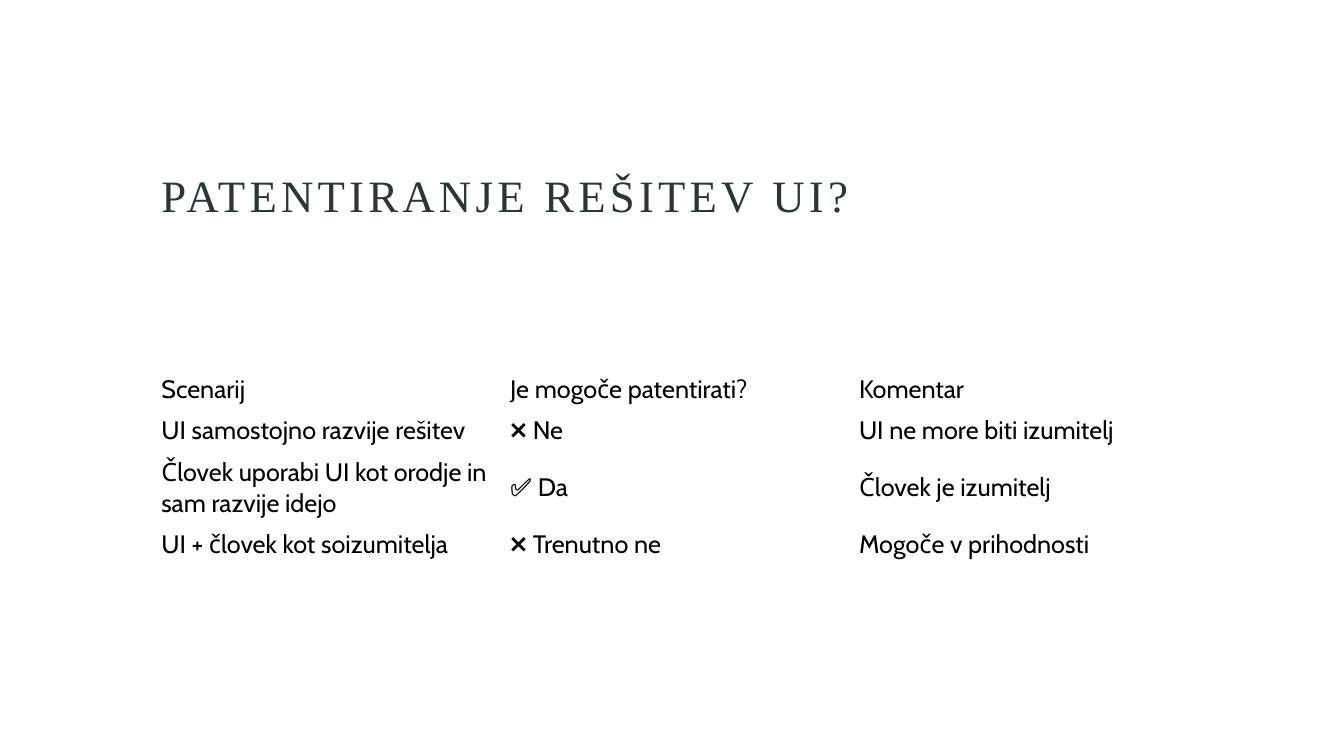
import pptx
import pptx.dml.color
import pptx.enum.text
import pptx.util

TITLE_COLOR = pptx.dml.color.RGBColor(0x29, 0x37, 0x37)
TEXT_COLOR = pptx.dml.color.RGBColor(0x00, 0x00, 0x00)
MIDDLE = pptx.enum.text.MSO_ANCHOR.MIDDLE
BOTTOM = pptx.enum.text.MSO_ANCHOR.BOTTOM
LEFT = pptx.enum.text.PP_ALIGN.LEFT

SLIDE_WIDTH, SLIDE_HEIGHT = 13.33, 7.5
MARGIN = 1.5
CONTENT_WIDTH = 10.38
LINE_HEIGHT = 0.31
CELL_PADDING = 0.1

SCENARIOS = [
    ("Scenarij", "Je mogoče patentirati?", "Komentar"),
    ("UI samostojno razvije rešitev", "❌ Ne", "UI ne more biti izumitelj"),
    ("Človek uporabi UI kot orodje in sam razvije idejo", "✅ Da", "Človek je izumitelj"),
    ("UI + človek kot soizumitelja", "❌ Trenutno ne", "Mogoče v prihodnosti"),
]
ROW_LINES = [1, 1, 2, 1]


def format_span(span, size, font_name, color):
    span.font.size = pptx.util.Pt(size)
    span.font.name = font_name
    span.font.color.rgb = color


def place_title(slide, box):
    title = slide.shapes.title
    title.left, title.top, title.width, title.height = map(pptx.util.Inches, box)
    frame = title.text_frame
    frame.text = "PATENTIRANJE REŠITEV UI?"
    frame.word_wrap = True
    frame.auto_size = pptx.enum.text.MSO_AUTO_SIZE.NONE
    frame.vertical_anchor = BOTTOM
    para = frame.paragraphs[0]
    para.alignment = LEFT
    para.line_spacing = 0.9
    span = para.runs[0]
    format_span(span, 32, "Times New Roman", TITLE_COLOR)
    span.font._element.set("spc", "300")


def place_table(slide, box):
    lengths = map(pptx.util.Inches, box)
    table = slide.shapes.add_table(len(SCENARIOS), len(SCENARIOS[0]), *lengths).table
    table.first_row = False
    table.horz_banding = False
    for row, lines, texts in zip(table.rows, ROW_LINES, SCENARIOS):
        row.height = pptx.util.Inches(lines * LINE_HEIGHT + CELL_PADDING)
        for cell, text in zip(row.cells, texts):
            cell.fill.background()
            cell.vertical_anchor = MIDDLE
            cell.text = text
            format_span(cell.text_frame.paragraphs[0].runs[0], 18, "Cabin", TEXT_COLOR)


def build_scenario_slide(deck):
    slide = deck.slides.add_slide(deck.slide_layouts[5])
    table_height = sum(ROW_LINES) * LINE_HEIGHT + len(ROW_LINES) * CELL_PADDING
    place_title(slide, (MARGIN, SLIDE_HEIGHT * 0.1, CONTENT_WIDTH, SLIDE_HEIGHT * 0.2))
    place_table(slide, (MARGIN, 3.66, CONTENT_WIDTH, table_height))


def main():
    deck = pptx.Presentation()
    deck.slide_width = pptx.util.Inches(SLIDE_WIDTH)
    deck.slide_height = pptx.util.Inches(SLIDE_HEIGHT)
    build_scenario_slide(deck)
    deck.save("out.pptx")


if __name__ == "__main__":
    main()
